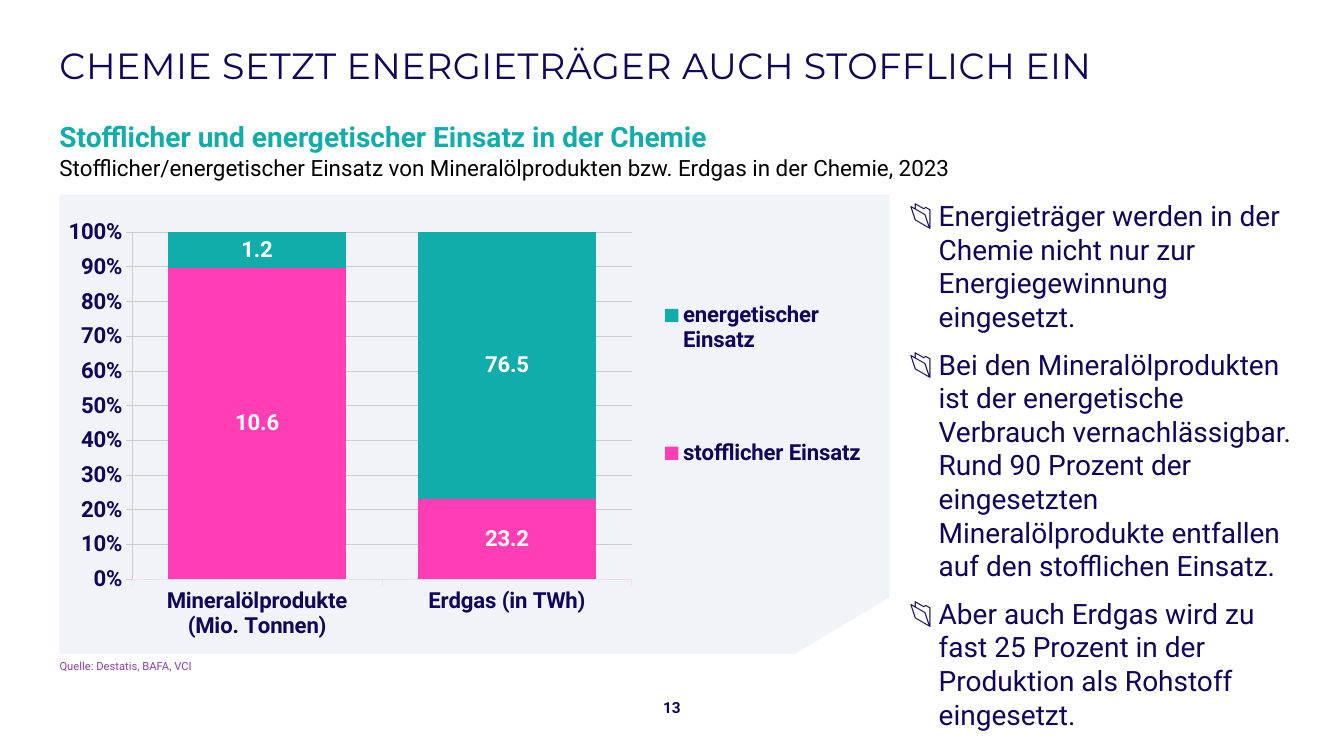
import pptx
import pptx.chart.data
import pptx.dml.color
import pptx.enum.chart
import pptx.enum.text
import pptx.oxml
import pptx.oxml.ns
import pptx.util

PX = 9144
NAVY, TEAL, PINK, GREY = "10065A", "10ADAA", "FF3EB5", "CCCCCC"
LEFT = 59
ALIGN = pptx.enum.text.PP_ALIGN
ANCHOR = pptx.enum.text.MSO_ANCHOR
POINTS = [
    "Energieträger werden in der Chemie nicht nur zur Energiegewinnung eingesetzt.",
    "Bei den Mineralölprodukten ist der energetische Verbrauch vernachlässigbar. "
    "Rund 90 Prozent der eingesetzten Mineralölprodukte entfallen auf den stofflichen Einsatz.",
    "Aber auch Erdgas wird zu fast 25 Prozent in der Produktion als Rohstoff eingesetzt.",
]
CATS = ["Mineralölprodukte\n(Mio. Tonnen)", "Erdgas (in TWh)"]
SERIES = [
    ("stofflicher Einsatz", (10.6, 23.2), PINK),
    ("energetischer Einsatz", (1.2, 76.5), TEAL),
]


def emu(*nums):
    """Turn px lengths into EMU."""
    return [pptx.util.Emu(n * PX) for n in nums]


def rgb(code):
    """Turn a hex string into a colour."""
    return pptx.dml.color.RGBColor.from_string(code)


def style(font, size, color, bold=False, face="Roboto"):
    """Set the look of a font."""
    font.size = pptx.util.Pt(size)
    font.name = face
    font.bold = bold
    font.color.rgb = rgb(color)


def frame(slide, box, pad=0, anchor=ANCHOR.TOP):
    """Add an empty wrapping text box and return its frame."""
    text = slide.shapes.add_textbox(*emu(*box)).text_frame
    text.word_wrap = True
    text.vertical_anchor = anchor
    text.margin_left = text.margin_right = 0
    text.margin_top = text.margin_bottom = emu(pad)[0]
    return text


def label(slide, box, words, size, color, bold=False, face="Roboto",
          anchor=ANCHOR.TOP, align=ALIGN.LEFT):
    """Add one line of text and return its run."""
    para = frame(slide, box, anchor=anchor).paragraphs[0]
    para.alignment = align
    run = para.add_run()
    run.text = words
    style(run.font, size, color, bold, face)
    return run


def head(slide, box):
    """Place the title and the two heading lines."""
    x, y, w, h = box
    run = label(slide, (x, y, w, 98), "CHEMIE SETZT ENERGIETRÄGER AUCH STOFFLICH EIN",
                26, NAVY, face="Montserrat", anchor=ANCHOR.MIDDLE)
    run.font._element.set("spc", "30")
    label(slide, (x, y + 104, w, 31),
          "Stofflicher und energetischer Einsatz in der Chemie", 20, TEAL, True)
    label(slide, (x, y + 138, w, 28),
          "Stofflicher/energetischer Einsatz von Mineralölprodukten bzw. Erdgas in der Chemie, 2023",
          16, "000000")


def panel(slide, box):
    """Draw the pale panel with its cut corner and the chart on it."""
    x, y, w, h = box
    form = slide.shapes.build_freeform(x, y, scale=PX)
    form.add_line_segments([(x + w, y), (x + w, y + h - 56),
                            (x + w - 94, y + h), (x, y + h)], close=True)
    shape = form.convert_to_shape()
    shape.shadow.inherit = False
    shape.fill.solid()
    shape.fill.fore_color.rgb = rgb("F0F3F7")
    shape.line.fill.background()
    graph(slide, (x + 9, y + 12, w - 28, h - 27))


def place(node, area, inner=False):
    """Give a chart part a manual layout in fractions of the chart."""
    for old in node.findall(pptx.oxml.ns.qn("c:layout")):
        node.remove(old)
    target = '<c:layoutTarget val="inner"/>' if inner else ""
    modes = "".join(f'<c:{k}Mode val="edge"/>' for k in "xy")
    sizes = "".join(f'<c:{k} val="{v}"/>' for k, v in zip("xywh", area))
    return pptx.oxml.parse_xml(
        f'<c:layout {pptx.oxml.ns.nsdecls("c")}><c:manualLayout>'
        f'{target}{modes}{sizes}</c:manualLayout></c:layout>')


def rule(line, color):
    """Set a thin chart line."""
    line.color.rgb = rgb(color)
    line.width = pptx.util.Pt(0.75)


def graph(slide, box):
    """Add the stacked column chart."""
    kinds = pptx.enum.chart
    data = pptx.chart.data.CategoryChartData()
    data.categories = CATS
    for name, vals, _ in SERIES:
        data.add_series(name, vals)
    chart = slide.shapes.add_chart(
        kinds.XL_CHART_TYPE.COLUMN_STACKED_100, *emu(*box), data).chart
    style(chart.font, 16, NAVY, True)
    chart.has_title = False
    plot = chart.plots[0]
    plot.gap_width, plot.overlap = 40, 100
    plot.vary_by_categories = False
    for part, (_, _, color) in zip(plot.series, SERIES):
        part.format.fill.solid()
        part.format.fill.fore_color.rgb = rgb(color)
        tags = part.data_labels
        tags.show_value = True
        tags.number_format = "#,##0.0"
        tags.number_format_is_linked = False
        tags.position = kinds.XL_LABEL_POSITION.CENTER
        style(tags.font, 16, "FFFFFF", True)
    axis = chart.value_axis
    axis.maximum_scale, axis.major_unit = 1, 0.1
    axis.tick_labels.number_format = "0%"
    axis.tick_labels.number_format_is_linked = False
    rule(axis.format.line, GREY)
    rule(axis.major_gridlines.format.line, GREY)
    rule(chart.category_axis.format.line, "FFD8F0")
    area = chart._chartSpace.chart.plotArea
    area.insert(0, place(area, (0.07, 0.06, 0.63, 0.81), True))
    chart.has_legend = True
    legend = chart.legend
    legend.position = kinds.XL_LEGEND_POSITION.RIGHT
    legend.include_in_layout = False
    node = legend._element
    spot = node.find(pptx.oxml.ns.qn("c:legendPos"))
    spot.addnext(place(node, (0.73, 0.02, 0.27, 0.79)))


def points(slide, box):
    """Write the bulleted points."""
    text = frame(slide, box, 4)
    for i, words in enumerate(POINTS):
        para = text.add_paragraph() if i else text.paragraphs[0]
        if i:
            para.space_before = pptx.util.Pt(10)
        props = para._p.get_or_add_pPr()
        props.set("marL", str(29 * PX))
        props.set("indent", str(-29 * PX))
        space = pptx.oxml.ns.nsdecls("a")
        for item in (f'<a:buClr {space}><a:srgbClr val="{NAVY}"/></a:buClr>',
                     f'<a:buFont {space} typeface="Roboto"/>',
                     f'<a:buChar {space} char="📂"/>'):
            props.append(pptx.oxml.parse_xml(item))
        run = para.add_run()
        run.text = words
        style(run.font, 20, NAVY)


def foot(slide, box):
    """Place the source line and the page number."""
    x, y, w, h = box
    label(slide, (x, y, w, 13), "Quelle: Destatis, BAFA, VCI", 8, "8C3E9F")
    label(slide, (x + 578, y + 34, 59, 28), "13", 11, NAVY, True,
          anchor=ANCHOR.MIDDLE, align=ALIGN.CENTER)


def main():
    """Build and save the slide."""
    deck = pptx.Presentation()
    deck.slide_width, deck.slide_height = emu(1333, 750)
    slide = deck.slides.add_slide(deck.slide_layouts[6])
    panel(slide, (LEFT, 193, 823, 456))
    head(slide, (LEFT, 15, 1220, 166))
    points(slide, (902, 193, 395, 441))
    foot(slide, (LEFT, 654, 1102, 62))
    deck.save("out.pptx")


if __name__ == "__main__":
    main()
